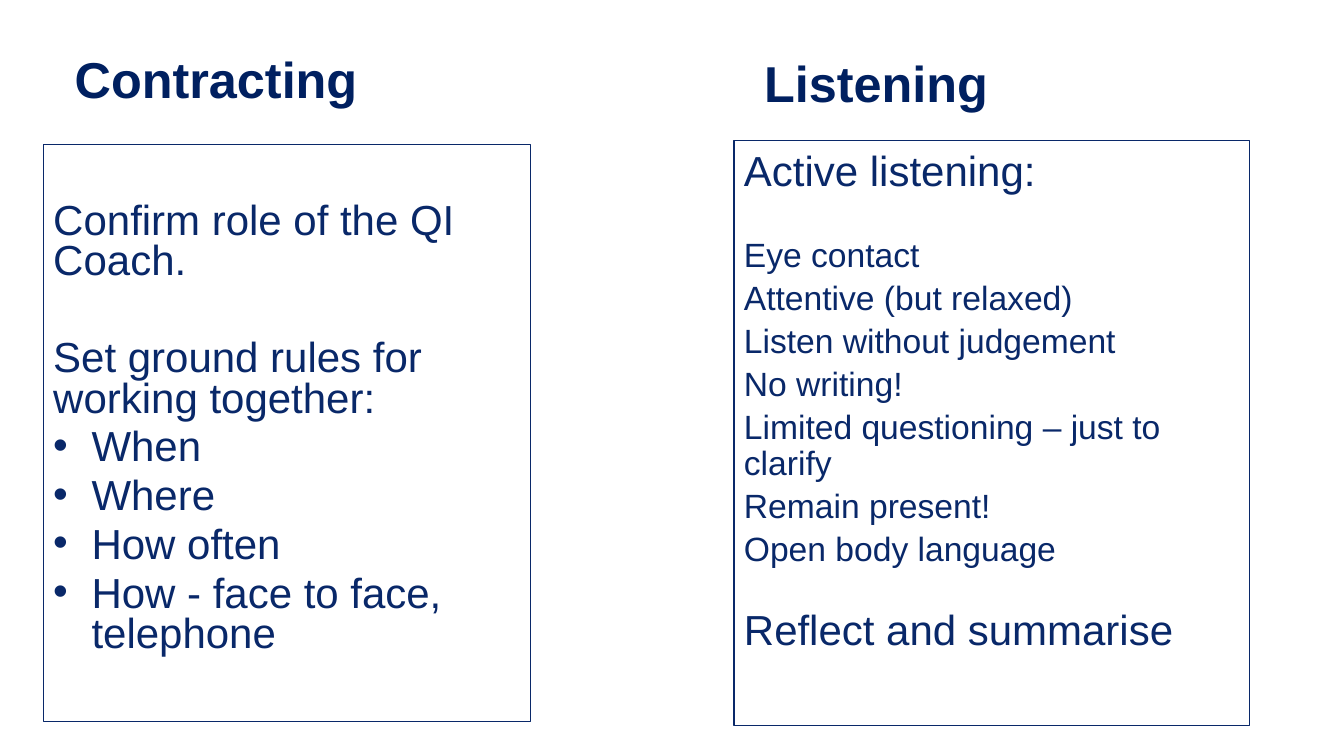
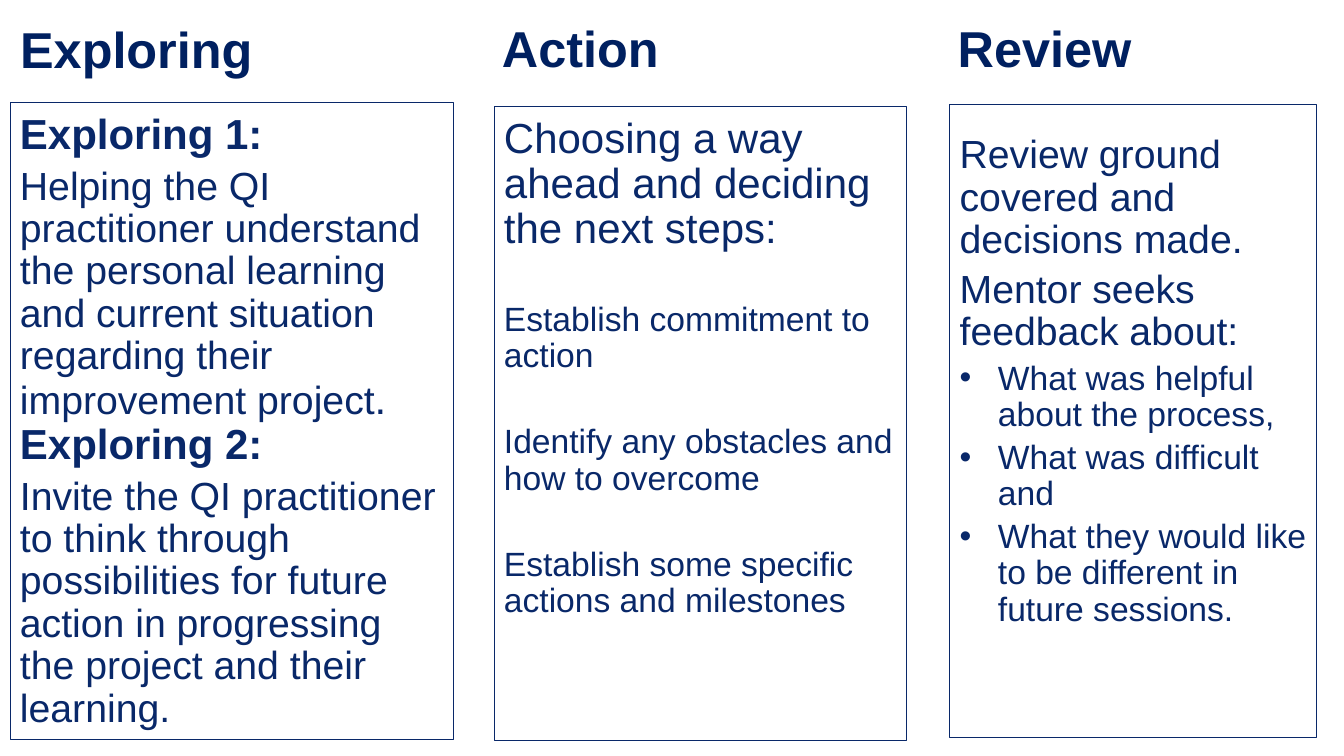
from lxml.etree import SubElement
from pptx import Presentation
from pptx.dml.color import RGBColor
from pptx.enum.text import MSO_ANCHOR, MSO_AUTO_SIZE, PP_ALIGN
from pptx.oxml.ns import qn
from pptx.util import Inches, Pt

FONT = "Arial"
TITLE_COLOUR, BODY_COLOUR = "002060", "092869"
TITLE_SIZE = 36
LINE_HEIGHT = 1.2     # height of a single-spaced line, in font sizes
BEFORE = 0.2          # space before a paragraph, in font sizes
INDENT = 0.38
TOP_INSET = 0.1

# A column: title, title place, box place, line spacing, paragraphs.
# A paragraph: text, size, then optional format; skip = size of a line left open above.
SLIDES = [
    [
        ("Contracting", (0.64, 0.15, 3.92, 1.25), (0.43, 1.43, 4.83, 5.73), 0.8, [
            ("Confirm role of the QI Coach.", 30, {"skip": 30}),
            ("Set ground rules for working together:", 30, {"skip": 30}),
            ("When", 30, {"bullet": True}),
            ("Where", 30, {"bullet": True}),
            ("How often", 30, {"bullet": True}),
            ("How - face to face, telephone", 30, {"bullet": True}),
        ]),
        ("Listening", (7.48, 0.19, 3.18, 1.25), (7.28, 1.39, 5.11, 5.81), 0.9, [
            ("Active listening:", 30, {}),
            ("Eye contact", 24, {"skip": 20}),
            ("Attentive (but relaxed)", 24, {}),
            ("Listen without judgement", 24, {}),
            ("No writing!", 24, {}),
            ("Limited questioning – just to clarify", 24, {}),
            ("Remain present!", 24, {}),
            ("Open body language", 24, {}),
            ("Reflect and summarise", 30, {"skip": 18}),
        ]),
    ],
    [
        ("Exploring", (0.1, 0.12, 3.01, 0.71), (0.1, 1.02, 4.4, 6.32), 0.9, [
            ("Exploring 1:", 30, {"bold": True}),
            ("Helping the QI practitioner understand the personal learning and "
             "current situation regarding their improvement project", 28,
             {"ending": (".", 30)}),
            ("Exploring 2:", 30, {"bold": True, "before": 0}),
            ("Invite the QI practitioner to think through possibilities for future "
             "action in progressing the project and their learning.", 28, {}),
        ]),
        ("Action", (4.88, 0.18, 2.3, 0.58), (4.9, 1.06, 4.09, 6.29), 0.9, [
            ("Choosing a way ahead and deciding the next steps:", 30, {}),
            ("Establish commitment to action", 24, {"skip": 24}),
            ("Identify any obstacles and how to overcome", 24, {"skip": 24}),
            ("Establish some specific actions and milestones", 24, {"skip": 24}),
        ]),
        ("Review", (9.4, 0.14, 2.91, 0.65), (9.42, 1.04, 3.64, 6.28), 0.9, [
            ("Review ground covered and decisions made.", 28, {"skip": 8}),
            ("Mentor seeks feedback about:", 28, {}),
            ("What was helpful about the process,", 24, {"bullet": True}),
            ("What was difficult and", 24, {"bullet": True}),
            ("What they would like to be different in future sessions.", 24,
             {"bullet": True}),
        ]),
    ],
]


def rgb(colour):
    return RGBColor.from_string(colour)


def add_run(p, text, size, colour=BODY_COLOUR, bold=False):
    r = p.add_run()
    r.text = text
    r.font.name, r.font.size, r.font.bold = FONT, Pt(size), bold
    r.font.color.rgb = rgb(colour)


def add_bullet(p):
    pPr = p._p.get_or_add_pPr()
    pPr.set("marL", str(Inches(INDENT)))
    pPr.set("indent", str(-Inches(INDENT)))
    SubElement(pPr, qn("a:buFont")).set("typeface", FONT)
    SubElement(pPr, qn("a:buChar")).set("char", "•")


def add_title(sp, text, place):
    sp.left, sp.top, sp.width, sp.height = map(Inches, place)
    tf = sp.text_frame
    tf.word_wrap, tf.auto_size = True, MSO_AUTO_SIZE.NONE
    tf.vertical_anchor = MSO_ANCHOR.MIDDLE
    p = tf.paragraphs[0]
    p.alignment = PP_ALIGN.LEFT
    add_run(p, text, TITLE_SIZE, TITLE_COLOUR, bold=True)


def add_box(slide, place, spacing, paragraphs):
    sp = slide.shapes.add_textbox(*map(Inches, place))
    sp.line.color.rgb, sp.line.width = rgb(BODY_COLOUR), Pt(0.75)
    tf = sp.text_frame
    tf.word_wrap = True
    for i, (text, size, form) in enumerate(paragraphs):
        skip = form.get("skip", 0)
        gap = (skip * (LINE_HEIGHT * spacing + (BEFORE if i else 0))
               + size * form.get("before", BEFORE))
        if i:
            p = tf.add_paragraph()
            p.space_before = Pt(round(gap, 1))
        else:
            p = tf.paragraphs[0]
            tf.margin_top = Inches(TOP_INSET) + (Pt(gap) if skip else 0)
        p.line_spacing = spacing
        if form.get("bullet"):
            add_bullet(p)
        add_run(p, text, size, bold=form.get("bold", False))
        if "ending" in form:
            add_run(p, *form["ending"])


def main():
    prs = Presentation()
    prs.slide_width, prs.slide_height = Inches(13.33), Inches(7.5)
    for columns in SLIDES:
        slide = prs.slides.add_slide(prs.slide_layouts[5])
        for i, (title, title_place, box_place, spacing, paragraphs) in enumerate(columns):
            sp = slide.shapes.add_textbox(0, 0, 0, 0) if i else slide.shapes.title
            add_title(sp, title, title_place)
            add_box(slide, box_place, spacing, paragraphs)
    prs.save("out.pptx")


if __name__ == "__main__":
    main()
